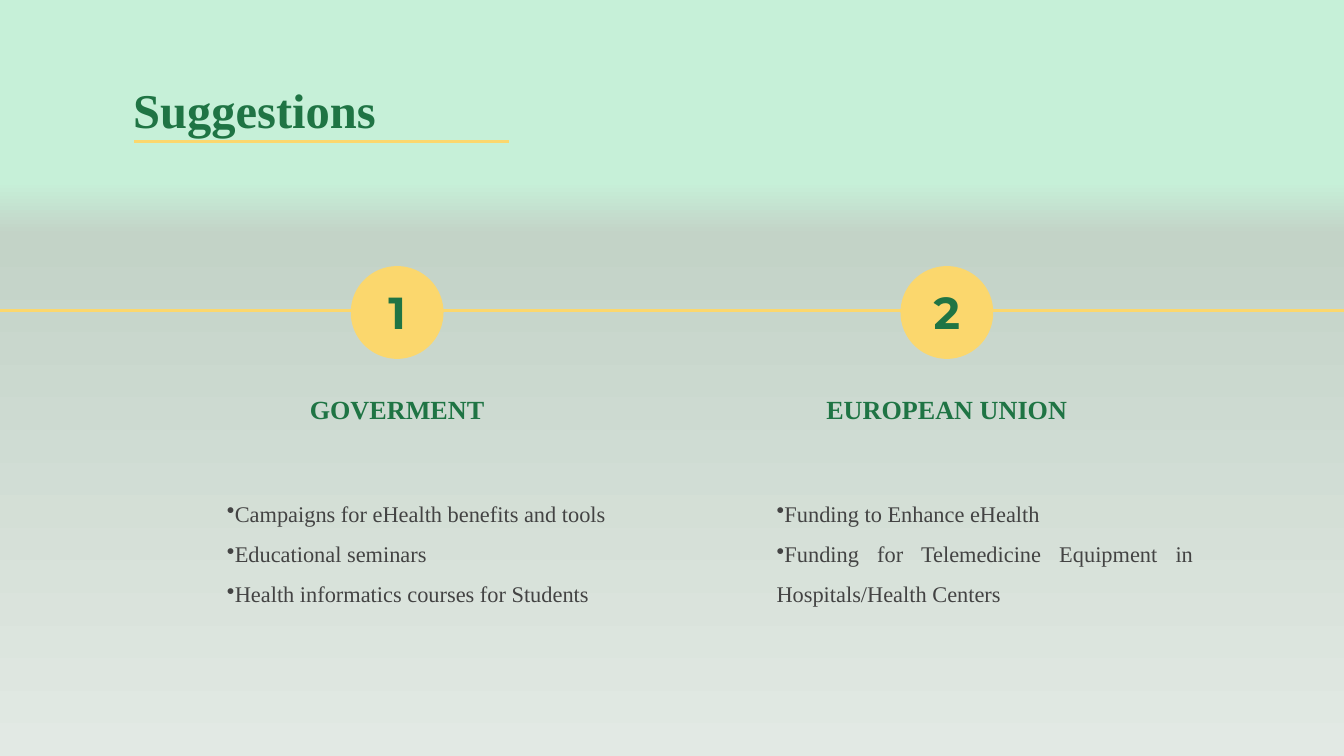
from copy import deepcopy

from lxml import etree
from pptx import Presentation
from pptx.dml.color import RGBColor
from pptx.enum.shapes import MSO_CONNECTOR, MSO_SHAPE
from pptx.enum.text import MSO_ANCHOR, PP_ALIGN
from pptx.oxml.ns import qn
from pptx.util import Pt

PX = 4572  # 200 px to the inch
LINE, OVAL = MSO_CONNECTOR.STRAIGHT, MSO_SHAPE.OVAL
TOP, MID, LOW = MSO_ANCHOR.TOP, MSO_ANCHOR.MIDDLE, MSO_ANCHOR.BOTTOM
LEFT, CENTER, JUST = PP_ALIGN.LEFT, PP_ALIGN.CENTER, PP_ALIGN.JUSTIFY
GREEN, GOLD, GREY = "1F7444", "FBD76D", "434343"
SERIF, SANS = "Times New Roman", "Montserrat"


def rgb(code):
    return RGBColor.from_string(code)


def write(box, lines, at, size, font=SERIF, color=GREEN, bold=True,
          align=CENTER, anchor=TOP, space=1.0, bullet=None):
    box.left, box.top, box.width, box.height = [n * PX for n in at]
    frame = box.text_frame
    frame.word_wrap = True
    frame.vertical_anchor = anchor
    frame.margin_left = frame.margin_right = 20 * PX
    frame.margin_top = frame.margin_bottom = 20 * PX
    frame.text = "\n".join(lines)
    for para in frame.paragraphs:
        para.alignment, para.line_spacing = align, space
        face = para.runs[0].font
        face.name, face.size, face.bold = font, Pt(size), bold
        face.color.rgb = rgb(color)
        if bullet:
            props = para._p.get_or_add_pPr()
            props.set("marL", "0")
            props.set("indent", "0")
            tint = etree.SubElement(props, qn("a:buClr"))
            etree.SubElement(tint, qn("a:srgbClr"), val=color)
            etree.SubElement(props, qn("a:buChar"), char=bullet)


deck = Presentation()
deck.slide_width, deck.slide_height = 2000 * PX, 1125 * PX
slide = deck.slides.add_slide(deck.slide_layouts[5])
shapes = slide.shapes

# Background gradient, top to bottom
fill = slide.background.fill
fill.gradient()
fill.gradient_angle = 270
first = fill.gradient_stops[0]._gs
first.addnext(deepcopy(first))
stops = [(0.24, "C6F0D8"), (0.31, "C3D3C7"), (1, "E2E9E4")]
for stop, (place, color) in zip(fill.gradient_stops, stops):
    stop.position = place
    stop.color.rgb = rgb(color)

# Timeline and title underline
for start, end, y in [(-18, 2018, 462), (200, 758, 210)]:
    rule = shapes.add_connector(LINE, start * PX, y * PX, end * PX, y * PX)
    rule.line.color.rgb = rgb(GOLD)
    rule.line.width = Pt(1.5)
    etree.SubElement(rule._element.spPr, qn("a:effectLst"))

# Title
write(shapes.title, ["Suggestions"], (178, 100, 1642, 126), 26,
      align=LEFT, anchor=LOW)

# Numbered columns: heading, body width, bullets
columns = [
    ("GOVERMENT", 620, ["Campaigns for eHealth benefits and tools",
                        "Educational seminars",
                        "Health informatics courses for Students"]),
    ("EUROPEAN UNION", 660, ["Funding to Enhance eHealth",
                             "Funding for Telemedicine Equipment in "
                             "Hospitals/Health Centers"]),
]
for i, (head, wide, points) in enumerate(columns):
    x = 318 + 818 * i
    disc = shapes.add_shape(OVAL, (x + 204) * PX, 396 * PX, 138 * PX, 138 * PX)
    disc.shadow.inherit = False
    disc.fill.solid()
    disc.fill.fore_color.rgb = rgb(GOLD)
    disc.line.fill.background()
    parts = [
        ([str(i + 1)], (x + 88, 408, 370, 110), 24,
         dict(font=SANS, anchor=MID)),
        ([head], (x, 566, 546, 126), 14, {}),
        (points, (x, 704, wide, 360), 12,
         dict(color=GREY, bold=False, align=JUST, space=1.5, bullet="•")),
    ]
    for lines, at, size, style in parts:
        write(shapes.add_textbox(0, 0, 0, 0), lines, at, size, **style)

deck.save("out.pptx")
